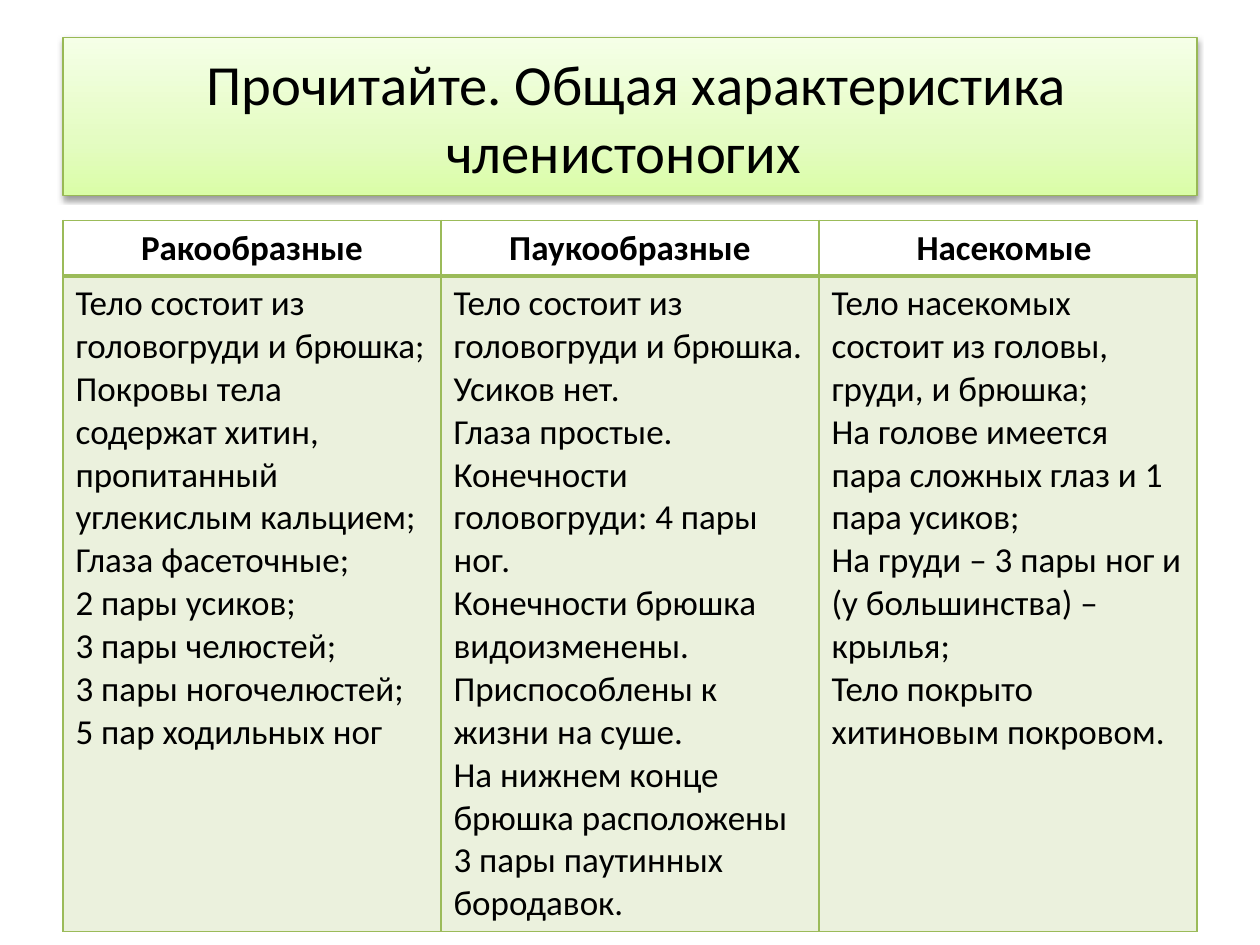
"""Build a slide comparing three classes of arthropods."""
from lxml import etree
from pptx import Presentation
from pptx import util as u
from pptx.dml.color import RGBColor
from pptx.enum import shapes, text
from pptx.oxml import ns

TITLE = " Прочитайте. Общая характеристика членистоногих "
CLASSES = [
    ("Ракообразные", [
        "Тело состоит из головогруди и брюшка; Покровы тела содержат хитин, "
        "пропитанный углекислым кальцием; Глаза фасеточные;",
        "2 пары усиков;",
        "3 пары челюстей;",
        "3 пары ногочелюстей;",
        "5 пар ходильных ног",
    ]),
    (" Паукообразные ", [
        "Тело состоит из головогруди и брюшка. Усиков нет.",
        "Глаза простые. Конечности головогруди: 4 пары ног.",
        "Конечности брюшка видоизменены. Приспособлены к жизни на суше.",
        "На нижнем конце брюшка расположены 3 пары паутинных бородавок.",
    ]),
    ("Насекомые ", [
        "Тело насекомых состоит из головы, груди, и брюшка;",
        "На голове имеется пара сложных глаз и 1 пара усиков;",
        "На груди – 3 пары ног и (у большинства) – крылья;",
        "Тело покрыто хитиновым покровом.",
    ]),
]
THEME = {
    "font": "Calibri", "ink": "000000", "title_size": 32.4, "table_size": 20,
    "accent": "9BBB59", "tint": 20, "title_line": "98B955",
    "gradient": [(0, "DAFDA7"), (35, "E4FCC2"), (100, "F5FFE7")],
}
LEFT, WIDTH = 0.5, 9
ROW_HEIGHTS = (0.44, 5.2)


def add_xml(parent, xml, index=None):
    """Insert a DrawingML fragment into parent."""
    tag, rest = xml[1:].split(" ", 1)
    node = etree.fromstring(f"<{tag} {ns.nsdecls('a')} {rest}")
    parent.insert(len(parent) if index is None else index, node)


def write(tf, paragraphs, size, bold=False, align=text.PP_ALIGN.LEFT):
    """Fill a text frame with formatted paragraphs."""
    tf.word_wrap = True
    for i, line in enumerate(paragraphs):
        p = tf.paragraphs[0] if i == 0 else tf.add_paragraph()
        p.alignment = align
        r = p.add_run()
        r.text = line
        r.font.name, r.font.size, r.font.bold = THEME["font"], u.Pt(size), bold
        r.font.color.rgb = RGBColor.from_string(THEME["ink"])


def set_borders(cell, **widths):
    """Draw the cell borders, in points, keyed by side."""
    for i, side in enumerate("LRTB"):
        add_xml(cell._tc.get_or_add_tcPr(),
                f'<a:ln{side} w="{u.Pt(widths.get(side, 1))}"><a:solidFill>'
                f'<a:srgbClr val="{THEME["accent"]}"/></a:solidFill></a:ln{side}>', i)


def add_title(s):
    """Add the gradient title panel."""
    sp = s.shapes.add_shape(shapes.MSO_SHAPE.RECTANGLE, u.Inches(LEFT),
                            u.Inches(0.3), u.Inches(WIDTH), u.Inches(1.25))
    stops = "".join(f'<a:gs pos="{pos * 1000}"><a:srgbClr val="{c}"/></a:gs>'
                    for pos, c in THEME["gradient"])
    add_xml(sp._element.spPr,
            f'<a:gradFill rotWithShape="1"><a:gsLst>{stops}</a:gsLst>'
            '<a:lin ang="16200000" scaled="0"/></a:gradFill>')
    sp.line.color.rgb = RGBColor.from_string(THEME["title_line"])
    sp.line.width = u.Pt(0.75)
    sp.shadow.inherit = False
    add_xml(sp._element.spPr.find(ns.qn("a:effectLst")),
            '<a:outerShdw blurRad="40000" dist="20000" dir="5400000" rotWithShape="0">'
            '<a:srgbClr val="000000"><a:alpha val="38000"/></a:srgbClr></a:outerShdw>')
    sp.text_frame.vertical_anchor = text.MSO_ANCHOR.MIDDLE
    write(sp.text_frame, [TITLE], THEME["title_size"], align=text.PP_ALIGN.CENTER)


def add_classes(s):
    """Add the comparison table, one column per class."""
    table = s.shapes.add_table(2, len(CLASSES), u.Inches(LEFT), u.Inches(1.75),
                               u.Inches(WIDTH), u.Inches(sum(ROW_HEIGHTS))).table
    table.first_row = table.horz_banding = False
    for row, height in zip(table.rows, ROW_HEIGHTS):
        row.height = u.Inches(height)
    for col, (name, traits) in enumerate(CLASSES):
        head, body = table.cell(0, col), table.cell(1, col)
        head.fill.background()
        body.fill.solid()
        body.fill.fore_color.rgb = RGBColor.from_string(THEME["accent"])
        add_xml(body._tc.tcPr.find(".//" + ns.qn("a:srgbClr")),
                f'<a:alpha val="{THEME["tint"] * 1000}"/>')
        set_borders(head, B=2)
        set_borders(body, T=2)
        write(head.text_frame, [name], THEME["table_size"], bold=True,
              align=text.PP_ALIGN.CENTER)
        write(body.text_frame, traits, THEME["table_size"])


def main():
    """Build and save the slide."""
    prs = Presentation()
    prs.slide_width, prs.slide_height = u.Inches(10), u.Inches(7.5)
    s = prs.slides.add_slide(prs.slide_layouts[6])
    add_title(s)
    add_classes(s)
    prs.save("out.pptx")


if __name__ == "__main__":
    main()
